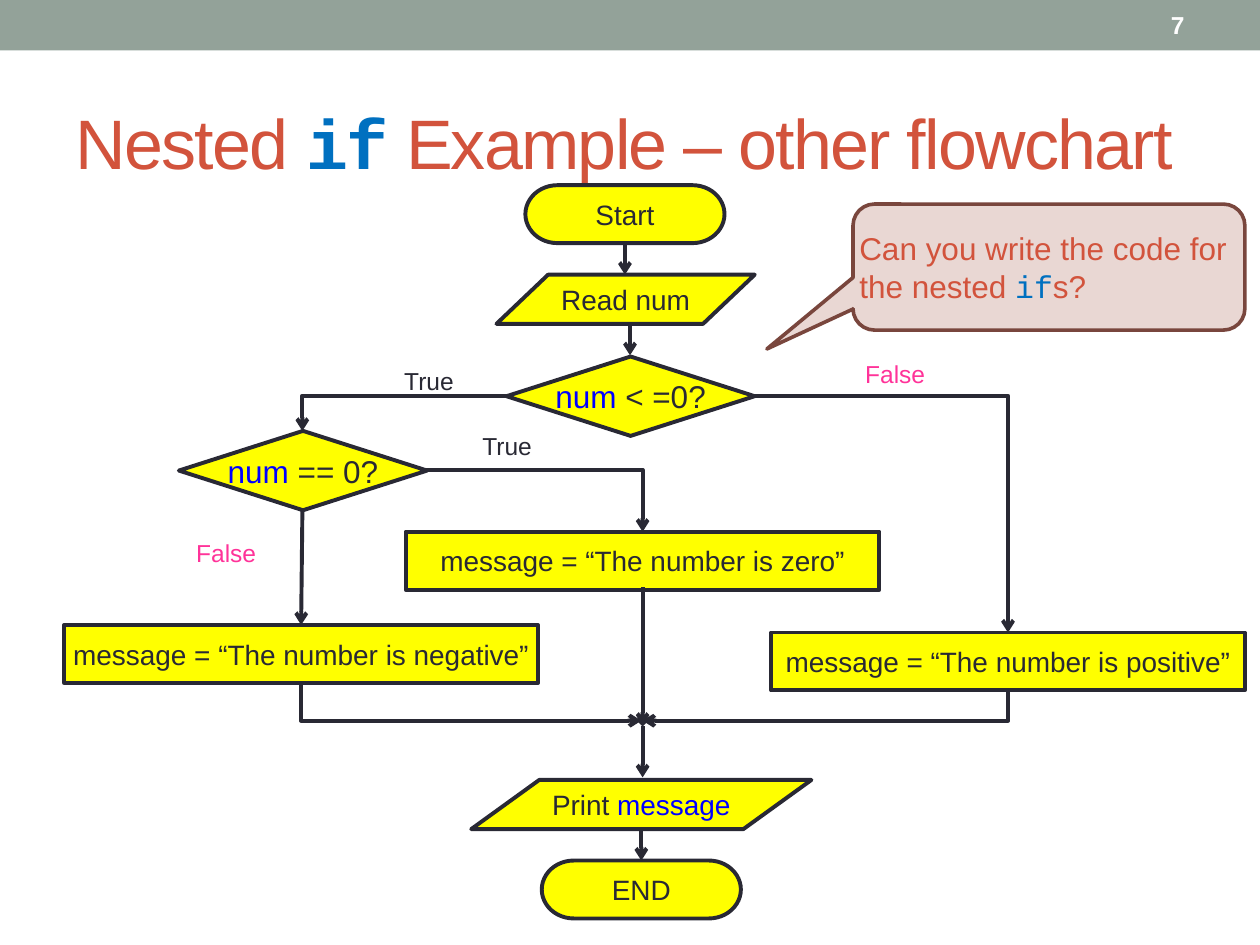
"""Build a flowchart slide for a nested if example."""
from lxml.etree import SubElement
from pptx import Presentation
from pptx.dml.color import RGBColor
from pptx.enum.shapes import MSO_CONNECTOR, MSO_SHAPE
from pptx.enum.text import MSO_ANCHOR, MSO_AUTO_SIZE, PP_ALIGN
from pptx.oxml.ns import qn
from pptx.util import Inches, Pt

INK = RGBColor(0x29, 0x29, 0x34)
YELLOW = RGBColor(0xFF, 0xFF, 0x00)
BLUE = RGBColor(0x00, 0x00, 0xFF)
CODE_BLUE = RGBColor(0x00, 0x70, 0xC0)
PINK = RGBColor(0xFF, 0x33, 0x99)
RED = RGBColor(0xD2, 0x53, 0x3C)
SAGE = RGBColor(0x93, 0xA2, 0x99)
ROSE = RGBColor(0xE9, 0xD7, 0xD3)
BROWN = RGBColor(0x79, 0x46, 0x3D)
WHITE = RGBColor(0xFF, 0xFF, 0xFF)
SANS, MONO = "Arial", "Courier New"

TITLE = [("Nested ", RED, SANS, False), ("if", CODE_BLUE, MONO, True),
         (" Example – other flowchart", RED, SANS, False)]
CALLOUT = [("Can you write the code for the nested ", RED), ("if", CODE_BLUE, MONO), ("s?", RED)]

TERMINATOR = (MSO_SHAPE.FLOWCHART_TERMINATOR, 1.58, 0.46, 16)
READ = (MSO_SHAPE.FLOWCHART_DATA, 2.05, 0.39, 16)
PRINT = (MSO_SHAPE.FLOWCHART_DATA, 2.7, 0.39, 16)
DECISION = (MSO_SHAPE.FLOWCHART_DECISION, 1.97, 0.63, 18)
PROCESS = (MSO_SHAPE.FLOWCHART_PROCESS, 3.76, 0.46, 16)
NODES = [
    (TERMINATOR, 4.17, 1.47, [("Start", INK)]),
    (READ, 3.94, 2.18, [("Read num", INK)]),
    (DECISION, 4.02, 2.83, [("num", BLUE), (" < =0?", INK)]),
    (DECISION, 1.42, 3.42, [("num ", BLUE), ("== 0?", INK)]),
    (PROCESS, 0.51, 4.96, [("message = “The number is negative”", INK)]),
    (PROCESS, 3.22, 4.22, [("message = “The number is zero”", INK)]),
    (PROCESS, 6.12, 5.02, [("message = “The number is positive”", INK)]),
    (PRINT, 3.74, 6.19, [("Print ", INK), ("message", BLUE)]),
    (TERMINATOR, 4.3, 6.83, [("END", INK)]),
]
BRANCH_LABELS = [("True", INK, 3.03, 2.86), ("True", INK, 3.65, 3.37),
                 ("False", PINK, 6.73, 2.8), ("False", PINK, 1.42, 4.22)]
STRAIGHT_ARROWS = [
    (4.96, 1.93, 4.96, 2.18), (5, 2.57, 5, 2.82), (2.4, 4.05, 2.39, 4.96),
    (5.1, 4.66, 5.1, 5.76), (5.09, 6.58, 5.09, 6.83),
]
JUNCTION_ARROW = (5.1, 5.72, 5.1, 6.17)
ACROSS_THEN_DOWN = [(4.02, 3.14, 2.4, 3.42), (3.38, 3.73, 5.1, 4.22), (5.99, 3.14, 8, 5.02)]
DOWN_THEN_ACROSS = [(2.39, 5.42, 5.09, 5.72), (8, 5.48, 5.1, 5.72)]


def write_runs(text_frame, runs, size, align=PP_ALIGN.LEFT, anchor=MSO_ANCHOR.MIDDLE):
    text_frame.vertical_anchor = anchor
    paragraph = text_frame.paragraphs[0]
    paragraph.alignment = align
    for text, color, *style in runs:
        font_name, bold = (style + [SANS, False][len(style):])
        run = paragraph.add_run()
        run.text = text
        run.font.name = font_name
        run.font.size = Pt(size)
        run.font.bold = bold
        run.font.color.rgb = color


def add_filled_shape(slide, preset, box, fill, line=None, weight=2.25):
    shape = slide.shapes.add_shape(preset, *map(Inches, box))
    shape.shadow.inherit = False
    shape.fill.solid()
    shape.fill.fore_color.rgb = fill
    if line is None:
        shape.line.fill.background()
    else:
        shape.line.color.rgb = line
        shape.line.width = Pt(weight)
    return shape


def add_text_box(slide, box, runs, size, align, anchor):
    text_frame = slide.shapes.add_textbox(*map(Inches, box)).text_frame
    text_frame.word_wrap = True
    write_runs(text_frame, runs, size, align, anchor)


def add_arrow(slide, points, kind=MSO_CONNECTOR.STRAIGHT, head=None):
    connector = slide.shapes.add_connector(kind, *map(Inches, points))
    connector.line.color.rgb = INK
    connector.line.width = Pt(2.25)
    properties = connector._element.spPr
    line = properties.find(qn("a:ln"))
    if head:
        SubElement(line, qn("a:headEnd"), type=head)
    SubElement(line, qn("a:tailEnd"), type="arrow")
    SubElement(properties, qn("a:effectLst"))
    return properties


def add_corner_arrow(slide, points, down_first=False):
    x1, y1, x2, y2 = points
    if down_first:
        center_x, center_y = (x1 + x2) / 2, (y1 + y2) / 2
        half_run, half_drop = abs(x2 - x1) / 2, (y2 - y1) / 2
        side = half_drop if x2 > x1 else -half_drop
        points = (center_x + side, center_y - half_run, center_x - side, center_y + half_run)
    properties = add_arrow(slide, points, MSO_CONNECTOR.ELBOW)
    properties.find(qn("a:prstGeom")).set("prst", "bentConnector2")
    if down_first:
        degrees = 270 if x2 > x1 else 90
        properties.find(qn("a:xfrm")).set("rot", str(degrees * 60000))


def add_title(slide):
    title = slide.shapes.title
    title.left, title.top, title.width, title.height = map(Inches, (0.5, 0.58, 9, 1.08))
    title.text_frame.auto_size = MSO_AUTO_SIZE.NONE
    write_runs(title.text_frame, TITLE, 40)
    for run in title.text_frame.paragraphs[0].runs:
        run.font._element.set("spc", "-100")


def add_callout(slide):
    callout = add_filled_shape(slide, MSO_SHAPE.ROUNDED_RECTANGULAR_CALLOUT,
                               (6.77, 1.62, 3.11, 1), ROSE, BROWN, 2.08)
    for index, value in enumerate((-0.72, 0.65, 0.17)):
        callout.adjustments[index] = value
    text_frame = callout.text_frame
    text_frame.margin_left = text_frame.margin_right = 0
    text_frame.margin_top = text_frame.margin_bottom = 0
    text_frame.word_wrap = True
    write_runs(text_frame, CALLOUT, 18)


def main():
    presentation = Presentation()
    presentation.slide_width, presentation.slide_height = Inches(10), Inches(7.5)
    slide = presentation.slides.add_slide(presentation.slide_layouts[5])
    add_filled_shape(slide, MSO_SHAPE.RECTANGLE, (0, 0, 10, 0.4), SAGE)
    add_title(slide)
    add_text_box(slide, (8.33, 0.02, 1.17, 0.36), [("7", WHITE, SANS, True)], 14,
                 PP_ALIGN.RIGHT, MSO_ANCHOR.MIDDLE)
    for (preset, width, height, size), left, top, runs in NODES:
        node = add_filled_shape(slide, preset, (left, top, width, height), YELLOW, INK)
        node.text_frame.word_wrap = False
        write_runs(node.text_frame, runs, size, PP_ALIGN.CENTER)
    for text, color, left, top in BRANCH_LABELS:
        add_text_box(slide, (left, top, 0.75, 0.34), [(text, color)], 14,
                     PP_ALIGN.CENTER, MSO_ANCHOR.TOP)
    for points in STRAIGHT_ARROWS:
        add_arrow(slide, points)
    add_arrow(slide, JUNCTION_ARROW, head="diamond")
    for points in ACROSS_THEN_DOWN:
        add_corner_arrow(slide, points)
    for points in DOWN_THEN_ACROSS:
        add_corner_arrow(slide, points, down_first=True)
    add_callout(slide)
    presentation.save("out.pptx")


if __name__ == "__main__":
    main()
